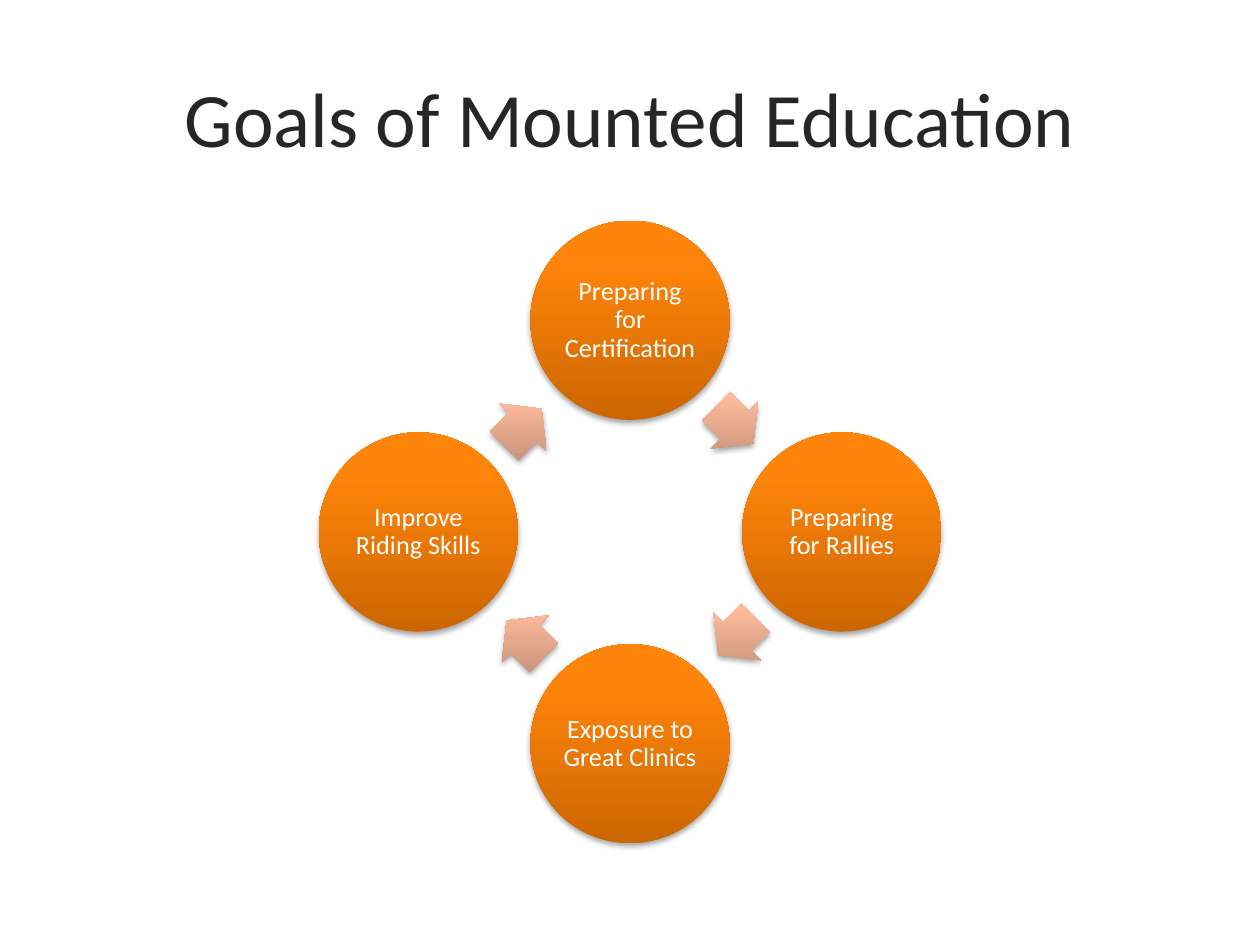
from dataclasses import dataclass
from math import cos, radians, sin

from lxml.etree import SubElement
from pptx import Presentation
from pptx.dml.color import RGBColor
from pptx.enum.shapes import MSO_SHAPE
from pptx.enum.text import MSO_ANCHOR, PP_ALIGN
from pptx.oxml.ns import qn
from pptx.util import Pt


@dataclass(frozen=True)
class Theme:
    font: str = "Calibri"
    title_size: float = 44
    goal_size: float = 15
    title_color: str = "262626"
    goal_color: str = "FFFFFF"
    goal_fill: tuple = ((0, "CC6600"), (80, "FF850A"), (100, "FF850C"))
    arrow_fill: tuple = ((0, "C28F78"), (80, "FCB99C"), (100, "FFB99A"))
    shadow_color: str = "000000"


class Deck:
    """Holds the theme and the current slide."""

    def __init__(self, slide, theme):
        self.slide, self.theme = slide, theme
        self.group = slide.shapes.add_group_shape()

    def set_text(self, tf, text, size, color, **paragraph_format):
        frame = {"word_wrap": True, "vertical_anchor": MSO_ANCHOR.MIDDLE}
        for name, value in frame.items():
            setattr(tf, name, value)
        p = tf.paragraphs[0]
        p.alignment = PP_ALIGN.CENTER
        for name, value in paragraph_format.items():
            setattr(p, name, value)
        r = p.add_run()
        r.text = text
        for name, value in {"name": self.theme.font, "size": Pt(size)}.items():
            setattr(r.font, name, value)
        r.font.color.rgb = RGBColor.from_string(color)

    def title(self, text, left, top, width, height):
        sp = self.slide.shapes.title
        box = {"left": left, "top": top, "width": width, "height": height}
        for name, value in box.items():
            setattr(sp, name, Pt(value))
        self.set_text(sp.text_frame, text, self.theme.title_size,
                      self.theme.title_color)

    def shape(self, kind, cx, cy, width, height, stops):
        """Shape centred on a point, with a vertical gradient and soft shadow."""
        sp = self.group.shapes.add_shape(
            kind, Pt(cx - width / 2), Pt(cy - height / 2), Pt(width), Pt(height))
        sp.line.fill.background()
        sp.shadow.inherit = False
        sp.fill.gradient()

        # Three stops that stay vertical when the shape turns
        properties = sp.element.spPr
        grad = properties.find(qn("a:gradFill"))
        grad.set("rotWithShape", "0")
        for child in list(grad):
            grad.remove(child)
        stop_list = SubElement(grad, qn("a:gsLst"))
        for position, color in stops:
            stop = SubElement(stop_list, qn("a:gs"), pos=str(position * 1000))
            SubElement(stop, qn("a:srgbClr"), val=color)
        SubElement(grad, qn("a:lin"), ang="16200000", scaled="0")

        # Shadow straight below
        effects = properties.find(qn("a:effectLst"))
        shadow = SubElement(effects, qn("a:outerShdw"), blurRad=str(int(Pt(3.15))),
                            dist=str(int(Pt(1.8))), dir="5400000", rotWithShape="0")
        color = SubElement(shadow, qn("a:srgbClr"), val=self.theme.shadow_color)
        SubElement(color, qn("a:alpha"), val="35000")
        return sp

    def goal(self, text, cx, cy, size):
        sp = self.shape(MSO_SHAPE.OVAL, cx, cy, size, size, self.theme.goal_fill)
        tf = sp.text_frame
        for side in ("left", "top", "right", "bottom"):
            setattr(tf, f"margin_{side}", Pt(1.5))
        self.set_text(tf, text, self.theme.goal_size, self.theme.goal_color,
                      line_spacing=0.9, space_after=Pt(5.25))

    def arrow(self, cx, cy, width, height, rotation):
        sp = self.shape(MSO_SHAPE.RIGHT_ARROW, cx, cy, width, height,
                        self.theme.arrow_fill)
        sp.adjustments[0], sp.adjustments[1] = 0.6, 0.5
        sp.rotation = rotation


def main():
    prs = Presentation()
    prs.slide_width, prs.slide_height = Pt(720), Pt(540)
    deck = Deck(prs.slides.add_slide(prs.slide_layouts[5]), Theme())

    deck.title("Goals of Mounted Education", 36, 21.6, 648, 90)

    # Cycle of goals, clockwise from the top
    goals = ["Preparing for Certification", "Preparing for Rallies",
             "Exposure to Great Clinics", "Improve Riding Skills"]
    cx, cy, radius = 360, 304, 121
    step = 360 / len(goals)
    arrow_radius = radius * cos(radians(step / 2))
    back = 1  # arrows sit slightly back along their direction

    for i, text in enumerate(goals):
        angle = radians(i * step - 90)
        deck.goal(text, cx + radius * cos(angle), cy + radius * sin(angle), 113.8)

        turn = i * step + step / 2
        out, ahead = radians(turn - 90), radians(turn)
        deck.arrow(cx + arrow_radius * cos(out) - back * cos(ahead),
                   cy + arrow_radius * sin(out) - back * sin(ahead),
                   30.2, 38.4, turn)

    prs.save("out.pptx")


if __name__ == "__main__":
    main()
